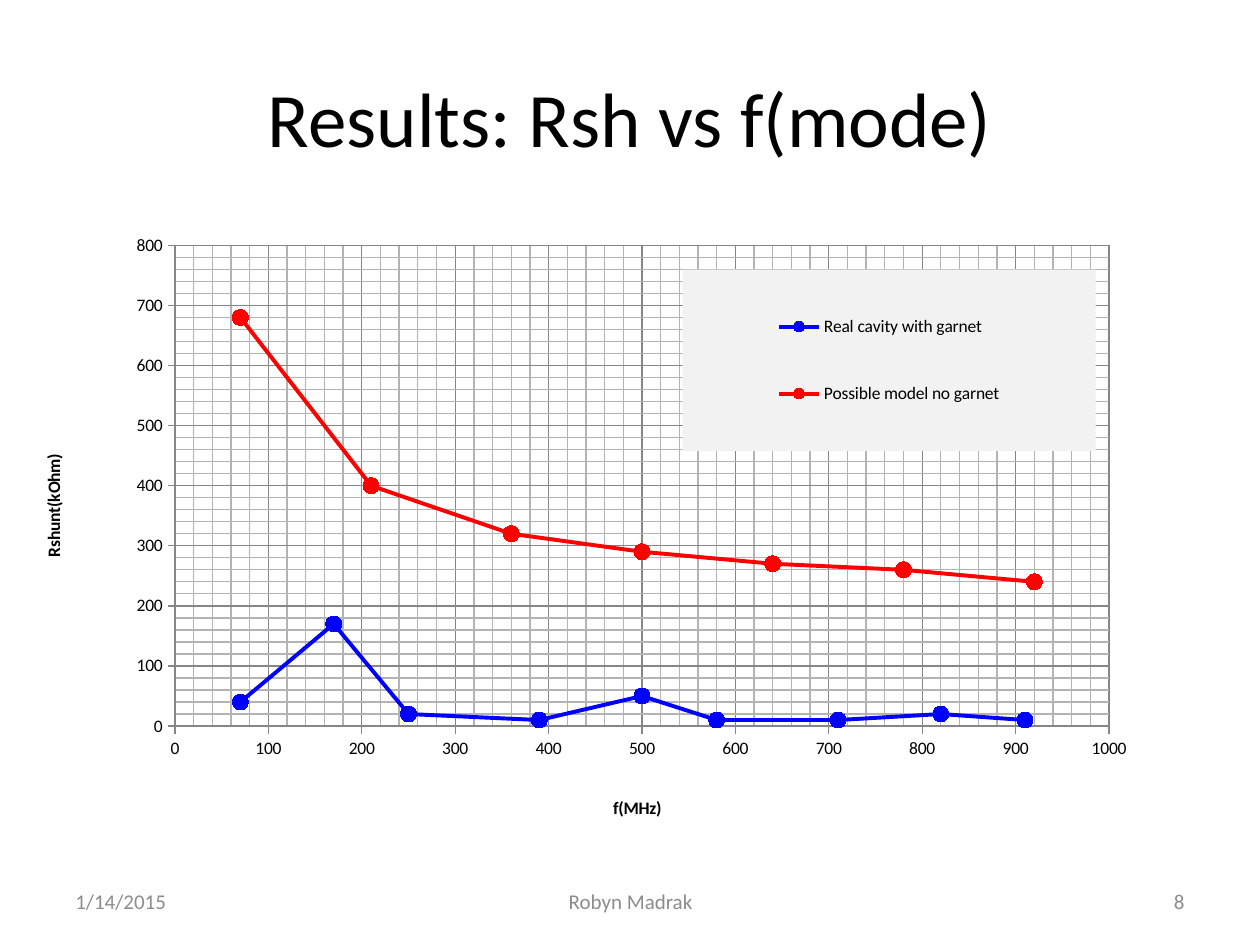
import pptx
import pptx.util
import pptx.chart.data
import pptx.dml.color
import pptx.enum.chart
import pptx.enum.text
import pptx.oxml
import pptx.oxml.ns

Inches, Pt = pptx.util.Inches, pptx.util.Pt
qn = pptx.oxml.ns.qn
rgb = pptx.dml.color.RGBColor.from_string
ALIGN = pptx.enum.text.PP_ALIGN
TICK = pptx.enum.chart.XL_TICK_MARK

# Content
TITLE = "Results: Rsh vs f(mode)"
FOOT = [  # text, left, width, alignment
    ("1/14/2015", 0.5, 2.33, ALIGN.LEFT),
    ("Robyn Madrak", 3.42, 3.17, ALIGN.CENTER),
    ("8", 7.17, 2.33, ALIGN.RIGHT),
]
SERIES = [  # name, colour, points (MHz, kOhm)
    ("Real cavity with garnet", "0000FF",
     [(70, 40), (170, 170), (250, 20), (390, 10), (500, 50),
      (580, 10), (710, 10), (820, 20), (910, 10)]),
    ("Possible model no garnet", "FF0000",
     [(70, 680), (210, 400), (360, 320), (500, 290),
      (640, 270), (780, 260), (920, 240)]),
]
AXES = [  # title, maximum, title place as fractions of the chart
    ("f(MHz)", 1000, (0.5, 0.9)),
    ("Rshunt(kOhm)", 800, (0.03, 0.39)),
]
PLOT = (0.142, 0.084, 0.769, 0.716)
LEGEND = (0.56, 0.12, 0.34, 0.27)
THEME = dict(font="Calibri", ink="000000", mute="8C8C8C", major="868686",
             minor="B3B3B3", panel="F2F2F2", head=44, foot=12, label=10)


def put_text(slide, text, box, size, color, align):
    shape = slide.shapes.add_textbox(*map(Inches, box))
    frame = shape.text_frame
    frame.word_wrap = True
    frame.vertical_anchor = pptx.enum.text.MSO_ANCHOR.MIDDLE
    para = frame.paragraphs[0]
    para.alignment = align
    run = para.add_run()
    run.text = text
    set_font(run.font, size, color)


def set_font(font, size, color, bold=False):
    font.name, font.size, font.bold = THEME["font"], Pt(size), bold
    font.color.rgb = rgb(color)


def parse(body):
    """Make a chart element from its XML."""
    names = pptx.oxml.ns.nsdecls("c", "a")
    return pptx.oxml.parse_xml(body.replace(">", f" {names}>", 1))


def place(node, spot, after=None, inner=False):
    """Give a chart part a manual layout in fractions of the chart."""
    for old in node.findall(qn("c:layout")):
        node.remove(old)
    tags = '<c:layoutTarget val="inner"/>' if inner else ""
    tags += '<c:xMode val="edge"/><c:yMode val="edge"/>'
    tags += "".join(f'<c:{k} val="{v}"/>' for k, v in zip("xywh", spot))
    new = parse(f"<c:layout><c:manualLayout>{tags}</c:manualLayout></c:layout>")
    if after:
        node.find(qn(after)).addnext(new)
    else:
        node.insert(0, new)


def fill(color):
    return f'<a:solidFill><a:srgbClr val="{color}"/></a:solidFill>'


def style_axis(axis, name, top, spot):
    axis.minimum_scale, axis.maximum_scale = 0, top
    axis.major_unit, axis.minor_unit = 100, 20
    axis.major_tick_mark, axis.minor_tick_mark = TICK.OUTSIDE, TICK.NONE
    axis.has_major_gridlines = axis.has_minor_gridlines = True
    for form in (axis.format, axis.major_gridlines.format):
        form.line.color.rgb = rgb(THEME["major"])
        form.line.width = Pt(0.75)
    axis._element.find(qn("c:minorGridlines")).append(
        parse(f'<c:spPr><a:ln w="9525">{fill(THEME["minor"])}</a:ln></c:spPr>'))
    axis.tick_labels.number_format = "General"
    axis.tick_labels.number_format_is_linked = False
    set_font(axis.tick_labels.font, THEME["label"], THEME["ink"])
    # Axis title
    para = axis.axis_title.text_frame.paragraphs[0]
    run = para.add_run()
    run.text = name
    set_font(run.font, THEME["label"], THEME["ink"], bold=True)
    place(axis.axis_title._element, spot, after="c:tx")


def add_plot(slide):
    data = pptx.chart.data.XyChartData()
    for name, _, points in SERIES:
        row = data.add_series(name)
        for x, y in points:
            row.add_data_point(x, y)
    box = map(Inches, (0.02, 1.5, 9.64, 5.33))
    kind = pptx.enum.chart.XL_CHART_TYPE.XY_SCATTER_LINES
    chart = slide.shapes.add_chart(kind, *box, data).chart
    set_font(chart.font, THEME["label"], THEME["ink"])
    chart.has_title = False
    chart.plots[0].vary_by_categories = False

    # Lines and markers
    for line, (_, color, _) in zip(chart.plots[0].series, SERIES):
        line.smooth = False
        line.format.line.color.rgb = rgb(color)
        line.format.line.width = Pt(2.25)
        mark = line.marker
        mark.style = pptx.enum.chart.XL_MARKER_STYLE.CIRCLE
        mark.size = 9
        mark.format.fill.solid()
        mark.format.fill.fore_color.rgb = rgb(color)
        mark.format.line.color.rgb = rgb(color)

    # Axes and plot area
    for axis, spec_row in zip((chart.category_axis, chart.value_axis), AXES):
        style_axis(axis, *spec_row)
    place(chart._chartSpace.chart.plotArea, PLOT, inner=True)

    # Legend over the plot
    chart.has_legend = True
    chart.legend.position = pptx.enum.chart.XL_LEGEND_POSITION.RIGHT
    chart.legend.include_in_layout = True
    node = chart.legend._element
    place(node, LEGEND, after="c:legendPos")
    node.find(qn("c:overlay")).addnext(
        parse(f'<c:spPr>{fill(THEME["panel"])}</c:spPr>'))


def main():
    deck = pptx.Presentation()
    deck.slide_width, deck.slide_height = Inches(10), Inches(7.5)
    slide = deck.slides.add_slide(deck.slide_layouts[6])
    put_text(slide, TITLE, (0.5, 0.3, 9, 1.25), size=THEME["head"],
             color=THEME["ink"], align=ALIGN.CENTER)
    for text, left, width, align in FOOT:
        put_text(slide, text, (left, 6.95, width, 0.4), size=THEME["foot"],
                 color=THEME["mute"], align=align)
    add_plot(slide)
    deck.save("out.pptx")


if __name__ == "__main__":
    main()
